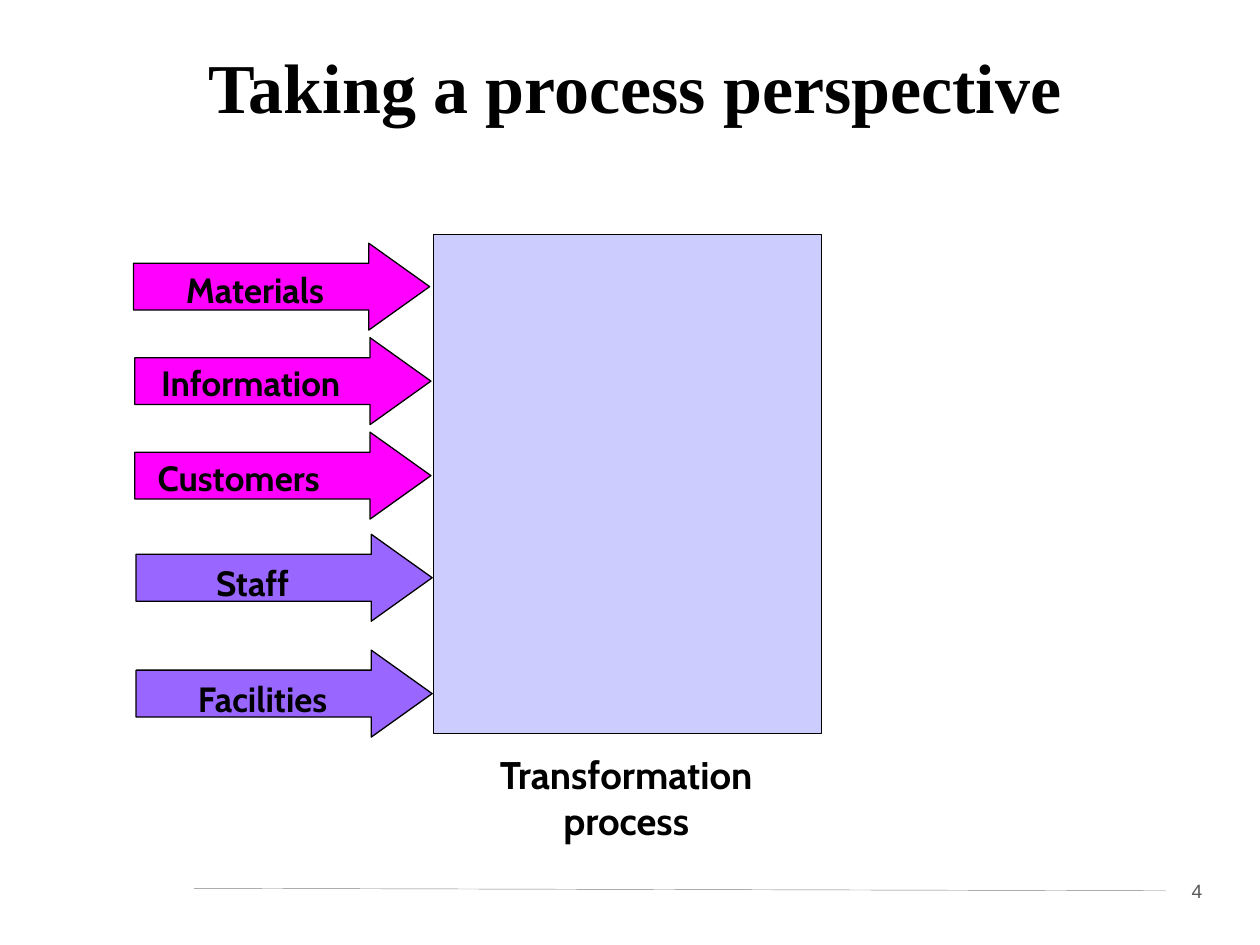
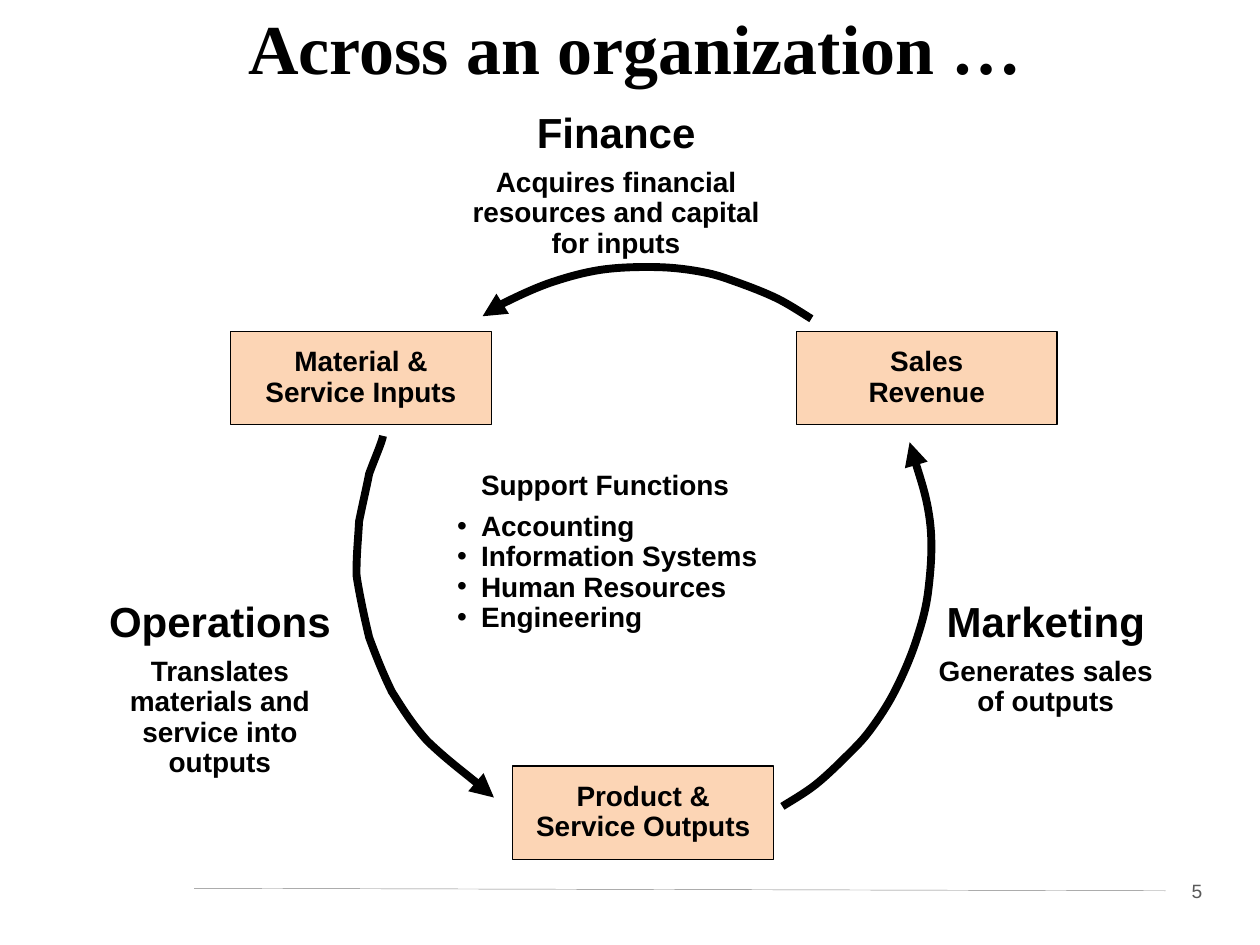
from lxml import etree
from pptx import Presentation
from pptx.dml.color import RGBColor
from pptx.enum.shapes import MSO_CONNECTOR, MSO_SHAPE
from pptx.enum.text import MSO_ANCHOR, PP_ALIGN
from pptx.oxml.ns import qn
from pptx.util import Inches, Pt

BLACK = RGBColor(0, 0, 0)
WHITE = RGBColor(0xFF, 0xFF, 0xFF)
GRAY = RGBColor(0x80, 0x80, 0x80)
NUMBER_GRAY = RGBColor(0x59, 0x59, 0x59)
MAGENTA = RGBColor(0xFF, 0x00, 0xFF)
PURPLE = RGBColor(0x99, 0x66, 0xFF)
LAVENDER = RGBColor(0xCC, 0xCC, 0xFF)
PEACH = RGBColor(0xFC, 0xD5, 0xB5)

TITLE_FONT, LABEL_FONT, BODY_FONT = "Times New Roman", "Cabin", "Arial"
LEFT, CENTER, RIGHT = PP_ALIGN.LEFT, PP_ALIGN.CENTER, PP_ALIGN.RIGHT
TOP, BOTTOM = MSO_ANCHOR.TOP, MSO_ANCHOR.BOTTOM
RECTANGLE, RIGHT_ARROW = MSO_SHAPE.RECTANGLE, MSO_SHAPE.RIGHT_ARROW
STRAIGHT = MSO_CONNECTOR.STRAIGHT
BODY_GAP = Pt(6.4)

INPUTS = [
    ("Materials", MAGENTA, RIGHT, (0, 0.07), (-0.06, 0.22)),
    ("Information", MAGENTA, RIGHT, (0.01, 0.82), (0.07, 0.96)),
    ("Customers", MAGENTA, CENTER, (0.01, 1.57), (0, 1.71)),
    ("Staff", PURPLE, CENTER, (0.02, 2.38), (0.11, 2.55)),
    ("Facilities", PURPLE, CENTER, (0.02, 3.3), (0.19, 3.47)),
]
STAGES = [
    ("Material & Service Inputs", 1.16, 1.79, 1.81),
    ("Sales Revenue", 5.65, 1.79, 1.21),
    ("Product & Service Outputs", 3.4, 5.24, 1.92),
]
ROLES = [
    ("Finance", "Acquires financial resources and capital for inputs", 2.85, 0, 2.74, 1.2),
    ("Marketing", "Generates sales of outputs", 6.55, 3.88, 2.16, 0.96),
    ("Operations", "Translates materials and service into outputs", 0, 3.88, 2.15, 1.54),
]
SUPPORT = ["Accounting", "Information Systems", "Human Resources", "Engineering"]
ARCS = [
    (3.16, 1.28, [(2.61, 0.41), (2.34, 0.25), (2.02, 0.12), (1.75, 0.04), (1.39, 0),
                  (0.95, 0.02), (0.55, 0.12), (0.2, 0.27), (0, 0.39)]),
    (5.54, 2.67, [(0, 2.89), (0.26, 2.72), (0.52, 2.48), (0.7, 2.28), (0.89, 1.98),
                  (1.06, 1.58), (1.16, 1.16), (1.17, 0.62), (1.01, 0)]),
    (2.15, 2.62, [(0.22, 0), (0.11, 0.3), (0.03, 0.68), (0.01, 1.11), (0.11, 1.6),
                  (0.29, 2.03), (0.57, 2.42), (1.1, 2.87)]),
]


def add_text_box(page, left, top, width, height, anchor=TOP, wrap=True):
    box = page.shapes.add_textbox(*map(Inches, (left, top, width, height)))
    box.text_frame.word_wrap = wrap
    box.text_frame.vertical_anchor = anchor
    return box.text_frame


def write(para, text, size, font, align=CENTER, bold=True, color=BLACK, spacing=None):
    para.alignment = align
    if spacing:
        para.line_spacing = spacing
    span = para.add_run()
    span.text = text
    span.font.size = Pt(size)
    span.font.name = font
    span.font.bold = bold
    span.font.color.rgb = color


def add_block(page, kind, left, top, width, height, fill, outlined=True):
    block = page.shapes.add_shape(kind, *map(Inches, (left, top, width, height)))
    block.shadow.inherit = False
    block.fill.solid()
    block.fill.fore_color.rgb = fill
    if outlined:
        block.line.color.rgb = BLACK
        block.line.width = Pt(0.75)
    else:
        block.line.fill.background()
    return block


def add_white_label(page, left, top, width, height):
    frame = add_block(page, RECTANGLE, left, top, width, height, WHITE, False).text_frame
    frame.word_wrap = True
    frame.vertical_anchor = TOP
    return frame.paragraphs[0]


def add_page(deck, title, title_top, number):
    page = deck.slides.add_slide(deck.slide_layouts[6])
    para = add_white_label(page, 9.25, 6.93, 0.5, 0.29)
    write(para, str(number), 11, BODY_FONT, bold=False, color=NUMBER_GRAY)
    rule = page.shapes.add_connector(STRAIGHT, *map(Inches, (1.54, 7.05, 9.25, 7.07)))
    rule.line.color.rgb = GRAY
    rule.line.width = Pt(0.25)
    etree.SubElement(rule._element.spPr, qn("a:effectLst"))
    frame = add_text_box(page, 0.67, title_top, 8.74, 0.77, BOTTOM)
    write(frame.paragraphs[0], title, 40, TITLE_FONT)
    return page


def add_process(page, left, top):
    caption = add_white_label(page, left + 2.36, top + 4.05, 3.1, 0.83)
    write(caption, "Transformation process", 22, LABEL_FONT)
    add_block(page, RECTANGLE, left + 2.38, top, 3.08, 3.96, LAVENDER)
    for name, color, align, (arrow_x, arrow_y), (label_x, label_y) in INPUTS:
        arrow = add_block(page, RIGHT_ARROW, left + arrow_x, top + arrow_y, 2.35, 0.69, color)
        arrow.adjustments[0] = 0.54
        arrow.adjustments[1] = 0.7
        label = add_text_box(page, left + label_x, top + label_y, 1.67, 0.44)
        write(label.paragraphs[0], name, 20, LABEL_FONT, align)


def add_stage(page, name, left, top, text_width):
    width, height, text_height = 2.07, 0.74, 0.58
    add_block(page, RECTANGLE, left, top, width, height, PEACH)
    frame = add_text_box(page, left + (width - text_width) / 2,
                         top + (height - text_height) / 2, text_width, text_height)
    write(frame.paragraphs[0], name, 16, BODY_FONT, spacing=0.9)


def add_role(page, name, duty, left, top, width, height):
    frame = add_text_box(page, left, top, width, height)
    write(frame.paragraphs[0], name, 24, BODY_FONT, spacing=0.9)
    para = frame.add_paragraph()
    para.space_before = BODY_GAP
    write(para, duty, 16, BODY_FONT, spacing=0.9)


def add_support(page, left, top):
    frame = add_text_box(page, left, top, 2.73, 1.41, wrap=False)
    for index, name in enumerate(["Support Functions"] + SUPPORT):
        para = frame.add_paragraph() if index else frame.paragraphs[0]
        properties = para._p.get_or_add_pPr()
        properties.set("marL", str(Inches(0.19)))
        properties.set("indent", str(Inches(-0.19) if index else 0))
        if index:
            etree.SubElement(properties, qn("a:buFont"), typeface=BODY_FONT)
            etree.SubElement(properties, qn("a:buChar"), char="•")
        if index == 1:
            para.space_before = BODY_GAP
        write(para, name, 16, BODY_FONT, LEFT, spacing=0.9)


def curve_handles(points):
    padded = [points[0], *points, points[-1]]
    for before, start, end, after in zip(padded, padded[1:], padded[2:], padded[3:]):
        leaving = [b + (c - a) / 6 for a, b, c in zip(before, start, end)]
        arriving = [c - (d - b) / 6 for b, c, d in zip(start, end, after)]
        yield leaving, arriving


def add_arc(page, left, top, points):
    placed = [(Inches(left + x), Inches(top + y)) for x, y in points]
    builder = page.shapes.build_freeform(*placed[0])
    builder.add_line_segments(placed[1:], close=False)
    arc = builder.convert_to_shape()
    segments = list(arc._element.iter(qn("a:lnTo")))
    for segment, handles in zip(segments, curve_handles(points)):
        segment.tag = qn("a:cubicBezTo")
        for index, (x, y) in enumerate(handles):
            handle = etree.Element(qn("a:pt"), x=str(Inches(x)), y=str(Inches(y)))
            segment.insert(index, handle)
    arc.shadow.inherit = False
    arc.fill.background()
    arc.line.color.rgb = BLACK
    arc.line.width = Pt(4.5)
    etree.SubElement(arc.line._get_or_add_ln(), qn("a:tailEnd"), type="triangle")


def add_cycle(page, left, top):
    stages = page.shapes.add_group_shape()
    for name, x, y, text_width in STAGES:
        add_stage(stages, name, left + x, top + y, text_width)
    functions = page.shapes.add_group_shape()
    for name, duty, x, y, width, height in ROLES:
        add_role(functions, name, duty, left + x, top + y, width, height)
    add_support(functions, left + 2.86, top + 2.85)
    arcs = page.shapes.add_group_shape()
    for x, y, points in ARCS:
        add_arc(arcs, left + x, top + y, points)


def main():
    deck = Presentation()
    deck.slide_width, deck.slide_height = Inches(10), Inches(7.5)
    add_process(add_page(deck, "Taking a process perspective", 0.29, 4), 1.06, 1.86)
    add_cycle(add_page(deck, "Across an organization …", -0.02, 5), 0.67, 0.84)
    deck.save("out.pptx")


if __name__ == "__main__":
    main()
